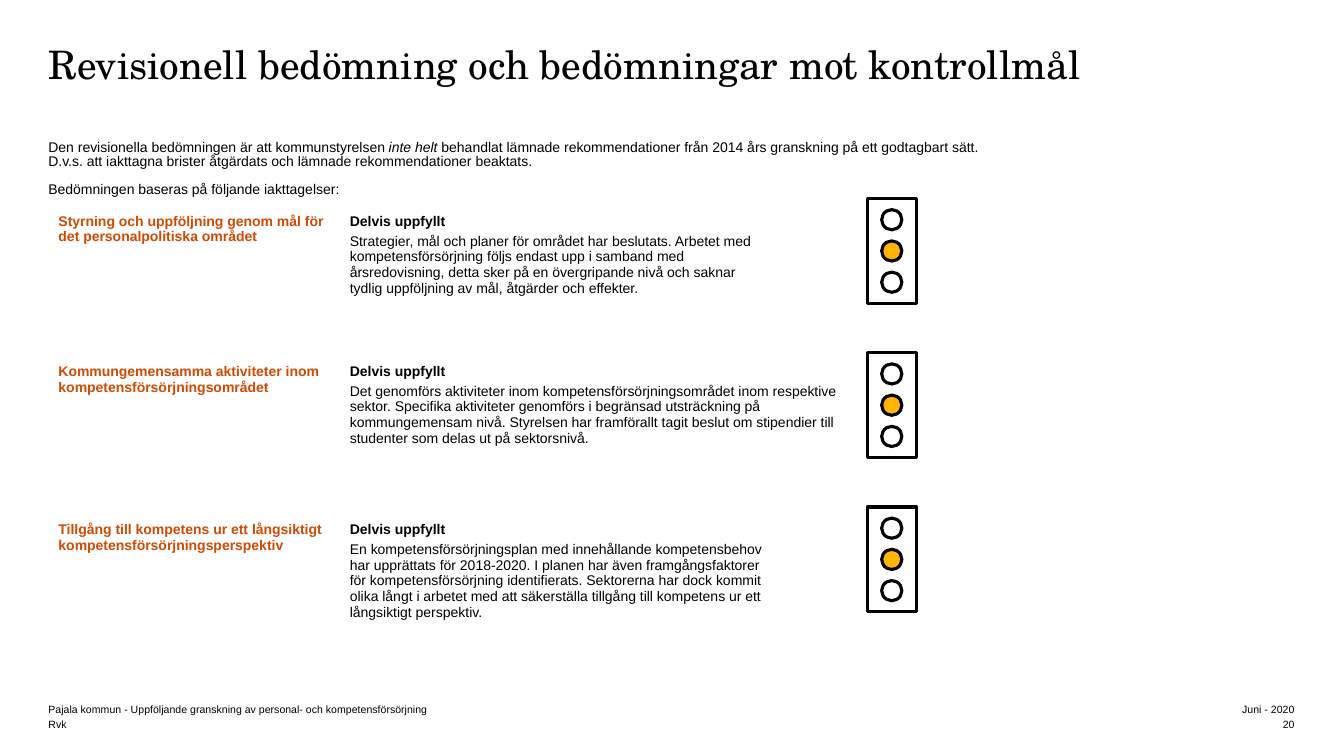
from dataclasses import dataclass
from pptx import Presentation
from pptx import util as u
from pptx.dml import color
from pptx.enum import shapes, text


@dataclass(frozen=True)
class Theme:
    black: str = "000000"
    rust: str = "D04A02"
    amber: str = "FFB600"
    serif: str = "TeX Gyre Schola"
    sans: str = "Arial"
    head: float = 28
    body: float = 10
    foot: float = 7.5
    edge: float = 2.25


THEME = Theme()

TITLE = "Revisionell bedömning och bedömningar mot kontrollmål"
INTRO = [
    (38, [("Den revisionella bedömningen är att kommunstyrelsen ", False),
          ("inte helt", True),
          (" behandlat lämnade rekommendationer från 2014 års granskning "
           "på ett godtagbart sätt.", False)]),
    (0, [("D.v.s. att iakttagna brister åtgärdats och lämnade "
          "rekommendationer beaktats.", False)]),
    (10, [("Bedömningen baseras på följande iakttagelser:", False)]),
]
GRADE = "Delvis uppfyllt"
GOALS = [
    (1.49, 0.96,
     "Styrning och uppföljning genom mål för det personalpolitiska området",
     "Strategier, mål och planer för området har beslutats. Arbetet med "
     "kompetensförsörjning följs endast upp i samband med årsredovisning, "
     "detta sker på en övergripande nivå och saknar tydlig uppföljning av "
     "mål, åtgärder och effekter."),
    (1.57, 0.1,
     "Kommungemensamma aktiviteter inom kompetensförsörjningsområdet",
     "Det genomförs aktiviteter inom kompetensförsörjningsområdet inom "
     "respektive sektor. Specifika aktiviteter genomförs i begränsad "
     "utsträckning på kommungemensam nivå. Styrelsen har framförallt tagit "
     "beslut om stipendier till studenter som delas ut på sektorsnivå."),
    (1.48, 0.96,
     "Tillgång till kompetens ur ett långsiktigt "
     "kompetensförsörjningsperspektiv",
     "En kompetensförsörjningsplan med innehållande kompetensbehov har "
     "upprättats för 2018-2020. I planen har även framgångsfaktorer för "
     "kompetensförsörjning identifierats. Sektorerna har dock kommit olika "
     "långt i arbetet med att säkerställa tillgång till kompetens ur ett "
     "långsiktigt perspektiv."),
]
FOOT = [
    ("Pajala kommun - Uppföljande granskning av personal- och "
     "kompetensförsörjning", "Juni - 2020"),
    ("Rvk", "20"),
]


def apply(item, **vals):
    for name, val in vals.items():
        setattr(item, name, val)


def inches(*nums):
    return [u.Inches(num) for num in nums]


def add_run(para, words, size, hue=THEME.black, face=THEME.sans, **vals):
    run = para.add_run()
    run.text = words
    apply(run.font, size=u.Pt(size), name=face, **vals)
    run.font.color.rgb = color.RGBColor.from_string(hue)


def set_frame(frame, anchor):
    apply(frame, margin_left=0, margin_right=0, margin_top=0, margin_bottom=0,
          word_wrap=True, auto_size=text.MSO_AUTO_SIZE.NONE,
          vertical_anchor=anchor)


def add_title(slide, left, top, width, height):
    title = slide.shapes.title
    apply(title, **dict(zip(("left", "top", "width", "height"),
                            inches(left, top, width, height))))
    frame = title.text_frame
    set_frame(frame, text.MSO_ANCHOR.TOP)
    para = frame.paragraphs[0]
    form = dict(alignment=text.PP_ALIGN.LEFT, line_spacing=0.85)
    apply(para, space_before=u.Pt(0), **form)
    add_run(para, TITLE, THEME.head, face=THEME.serif)
    for gap, parts in INTRO:
        para = frame.add_paragraph()
        apply(para, space_before=u.Pt(gap), **form)
        for words, slant in parts:
            add_run(para, words, THEME.body, italic=slant)


def add_goals(slide, left, top, widths):
    tall = sum(goal[0] for goal in GOALS)
    table = slide.shapes.add_table(
        len(GOALS), len(widths), *inches(left, top, sum(widths), tall)).table
    apply(table, first_row=False, horz_banding=False)
    for col, width in zip(table.columns, widths):
        col.width = u.Inches(width)
    for row, (high, right, goal, note) in zip(table.rows, GOALS):
        row.height = u.Inches(high)
        for cell in row.cells:
            cell.fill.background()
            pad = u.Inches(0.1)
            apply(cell, margin_left=pad, margin_right=pad,
                  margin_top=pad, margin_bottom=pad)
        name, verdict = row.cells[0], row.cells[1]
        verdict.margin_right = u.Inches(right)
        add_run(name.text_frame.paragraphs[0], goal, THEME.body,
                THEME.rust, bold=True)
        add_run(verdict.text_frame.paragraphs[0], GRADE, THEME.body, bold=True)
        para = verdict.text_frame.add_paragraph()
        para.space_before = u.Pt(3)
        add_run(para, note, THEME.body, bold=False)


def add_light(slide, left, top, width, height):
    group = slide.shapes.add_group_shape()
    kinds = shapes.MSO_SHAPE
    size, pitch = 0.2, 0.31
    side = left + (width - size) / 2
    first = top + (height - size) / 2 - pitch
    parts = [(kinds.RECTANGLE, left, top, width, height, None)]
    for num, hue in enumerate((None, THEME.amber, None)):
        parts.append((kinds.OVAL, side, first + num * pitch, size, size, hue))
    for kind, *box, hue in parts:
        shape = group.shapes.add_shape(kind, *inches(*box))
        shape.shadow.inherit = False
        shape.line.width = u.Pt(THEME.edge)
        shape.line.color.rgb = color.RGBColor.from_string(THEME.black)
        if hue:
            shape.fill.solid()
            shape.fill.fore_color.rgb = color.RGBColor.from_string(hue)
        else:
            shape.fill.background()


def add_foot(slide, left, top, width):
    high, wide, date = 0.15, 5.99, 3.86
    for num, (label, mark) in enumerate(FOOT):
        for words, start, span, align in (
                (label, left, wide, text.PP_ALIGN.LEFT),
                (mark, left + width - date, date, text.PP_ALIGN.RIGHT)):
            box = slide.shapes.add_textbox(
                *inches(start, top + num * high, span, high))
            set_frame(box.text_frame, text.MSO_ANCHOR.BOTTOM)
            para = box.text_frame.paragraphs[0]
            para.alignment = align
            add_run(para, words, THEME.foot)


def main():
    deck = Presentation()
    apply(deck, slide_width=u.Inches(13.33), slide_height=u.Inches(7.5))
    slide = deck.slides.add_slide(deck.slide_layouts.get_by_name("Title Only"))
    left, width = 0.48, 12.36
    add_title(slide, left, 0.47, width, 1.52)
    add_goals(slide, left, 2.02, (2.89, 5.21, 4.26))
    for num in range(len(GOALS)):
        add_light(slide, 8.6, 1.97 + num * 1.53, 0.49, 1.04)
    add_foot(slide, left, 6.95, width)
    deck.save("out.pptx")


if __name__ == "__main__":
    main()
